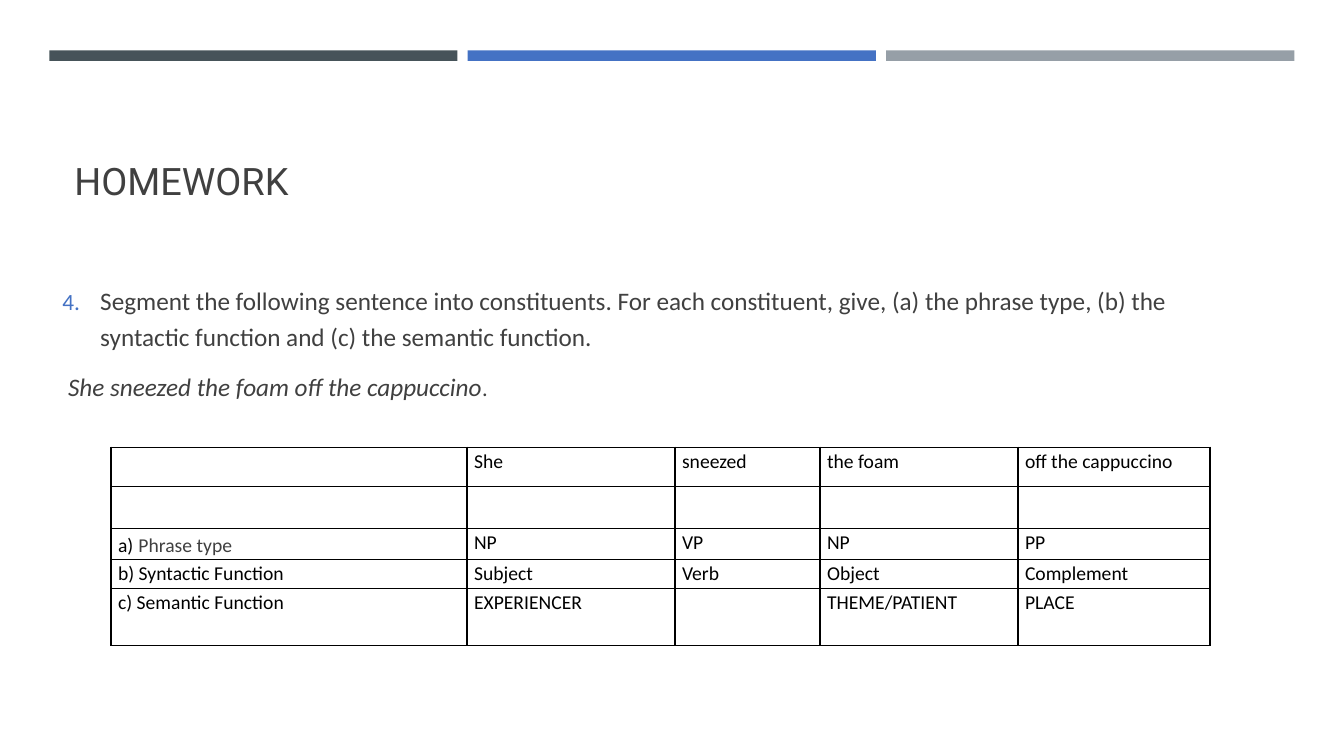
from lxml.etree import SubElement
from pptx import Presentation
from pptx.dml.color import RGBColor
from pptx.enum.shapes import MSO_SHAPE
from pptx.enum.text import MSO_ANCHOR, PP_ALIGN
from pptx.oxml.ns import qn
from pptx.util import Pt

BLACK, GREY, BLUE = "000000", "404040", "4472C4"
BAR_COLORS = ["465359", BLUE, "969FA7"]
COLUMN_WIDTHS = [254.3, 148.6, 103.6, 141.4, 137.1]
ROW_HEIGHTS = [28, 30, 22, 21, 41]
ROWS = [
    ["", "She", "sneezed", "the foam", "off the cappuccino"],
    [""] * 5,
    ["a)", "NP", "VP", "NP", "PP"],
    ["b) Syntactic Function", "Subject", "Verb", "Object", "Complement"],
    ["c) Semantic Function", "EXPERIENCER", "", "THEME/PATIENT", "PLACE"],
]


def color(hex_string):
    return RGBColor.from_string(hex_string)


def add_text(paragraph, text, size=18, font="Calibri", fill=GREY, italic=False):
    run = paragraph.add_run()
    run.text = text
    run.font.size = Pt(size)
    run.font.name = font
    run.font.italic = italic
    run.font.color.rgb = color(fill)


def add_bar(slide, left, fill):
    bar = slide.shapes.add_shape(
        MSO_SHAPE.RECTANGLE, Pt(left), Pt(36), Pt(291.6), Pt(7.5))
    bar.shadow.inherit = False
    bar.fill.solid()
    bar.fill.fore_color.rgb = color(fill)
    bar.line.fill.background()


def set_title(slide, text):
    title = slide.shapes.title
    title.left, title.top, title.width, title.height = Pt(46), Pt(55.5), Pt(868), Pt(93.5)
    title.text_frame.vertical_anchor = MSO_ANCHOR.BOTTOM
    paragraph = title.text_frame.paragraphs[0]
    paragraph.alignment = PP_ALIGN.LEFT
    paragraph.line_spacing = 0.9
    add_text(paragraph, text, size=27, font="Roboto")


def set_indent(paragraph, left, first=0):
    properties = paragraph._p.get_or_add_pPr()
    properties.set("marL", str(Pt(left)))
    properties.set("indent", str(Pt(first)))
    return properties


def number_paragraph(paragraph, start):
    properties = set_indent(paragraph, 27, -27)
    bullet_color = SubElement(properties, qn("a:buClr"))
    SubElement(bullet_color, qn("a:srgbClr"), val=BLUE)
    SubElement(properties, qn("a:buSzPct"), val="92000")
    SubElement(properties, qn("a:buFont"), typeface="Calibri")
    SubElement(properties, qn("a:buAutoNum"), type="arabicPeriod", startAt=str(start))


def add_task(slide):
    box = slide.shapes.add_textbox(Pt(37.5), Pt(116.6), Pt(868), Pt(253))
    frame = box.text_frame
    frame.word_wrap = True
    frame.vertical_anchor = MSO_ANCHOR.MIDDLE
    question, sentence = frame.paragraphs[0], frame.add_paragraph()
    for paragraph in (question, sentence):
        paragraph.line_spacing = 1.2
        paragraph.space_before = Pt(3.6)
        paragraph.space_after = Pt(6)
    number_paragraph(question, 4)
    add_text(question, "Segment the following sentence into constituents. For each "
             "constituent, give, (a) the phrase type, (b) the syntactic function "
             "and (c) the semantic function.")
    set_indent(sentence, 4)
    add_text(sentence, "She sneezed the foam off the cappuccino", italic=True)
    add_text(sentence, ".", size=16)


def add_borders(cell):
    properties = cell._tc.get_or_add_tcPr()
    for position, side in enumerate(("a:lnL", "a:lnR", "a:lnT", "a:lnB")):
        line = SubElement(properties, qn(side), w=str(Pt(1)))
        fill = SubElement(line, qn("a:solidFill"))
        SubElement(fill, qn("a:srgbClr"), val=BLACK)
        properties.insert(position, line)


def fill_cell(cell, text):
    cell.margin_left = cell.margin_right = Pt(5)
    cell.margin_top, cell.margin_bottom = Pt(0.7), Pt(0)
    cell.fill.background()
    add_borders(cell)
    paragraph = cell.text_frame.paragraphs[0]
    paragraph.line_spacing = 1.07
    paragraph.space_after = Pt(8)
    if text:
        add_text(paragraph, text, size=14, fill=BLACK)
    else:
        paragraph.font.size = Pt(14)


def add_analysis_table(slide):
    frame = slide.shapes.add_table(
        len(ROWS), len(COLUMN_WIDTHS), Pt(79.3), Pt(319.4),
        Pt(sum(COLUMN_WIDTHS)), Pt(sum(ROW_HEIGHTS)))
    table = frame.table
    table.first_row = table.horz_banding = False
    for column, width in zip(table.columns, COLUMN_WIDTHS):
        column.width = Pt(width)
    for row, height, texts in zip(table.rows, ROW_HEIGHTS, ROWS):
        row.height = Pt(height)
        for cell, text in zip(row.cells, texts):
            fill_cell(cell, text)
    phrase_label = table.cell(2, 0).text_frame.paragraphs[0]
    add_text(phrase_label, " ", size=16)
    add_text(phrase_label, "Phrase type", size=14)


def main():
    presentation = Presentation()
    presentation.slide_width, presentation.slide_height = Pt(960), Pt(540)
    slide = presentation.slides.add_slide(presentation.slide_layouts[5])
    for index, fill in enumerate(BAR_COLORS):
        add_bar(slide, 35.2 + index * 298.9, fill)
    set_title(slide, "HOMEWORK")
    add_task(slide)
    add_analysis_table(slide)
    presentation.save("out.pptx")


if __name__ == "__main__":
    main()
